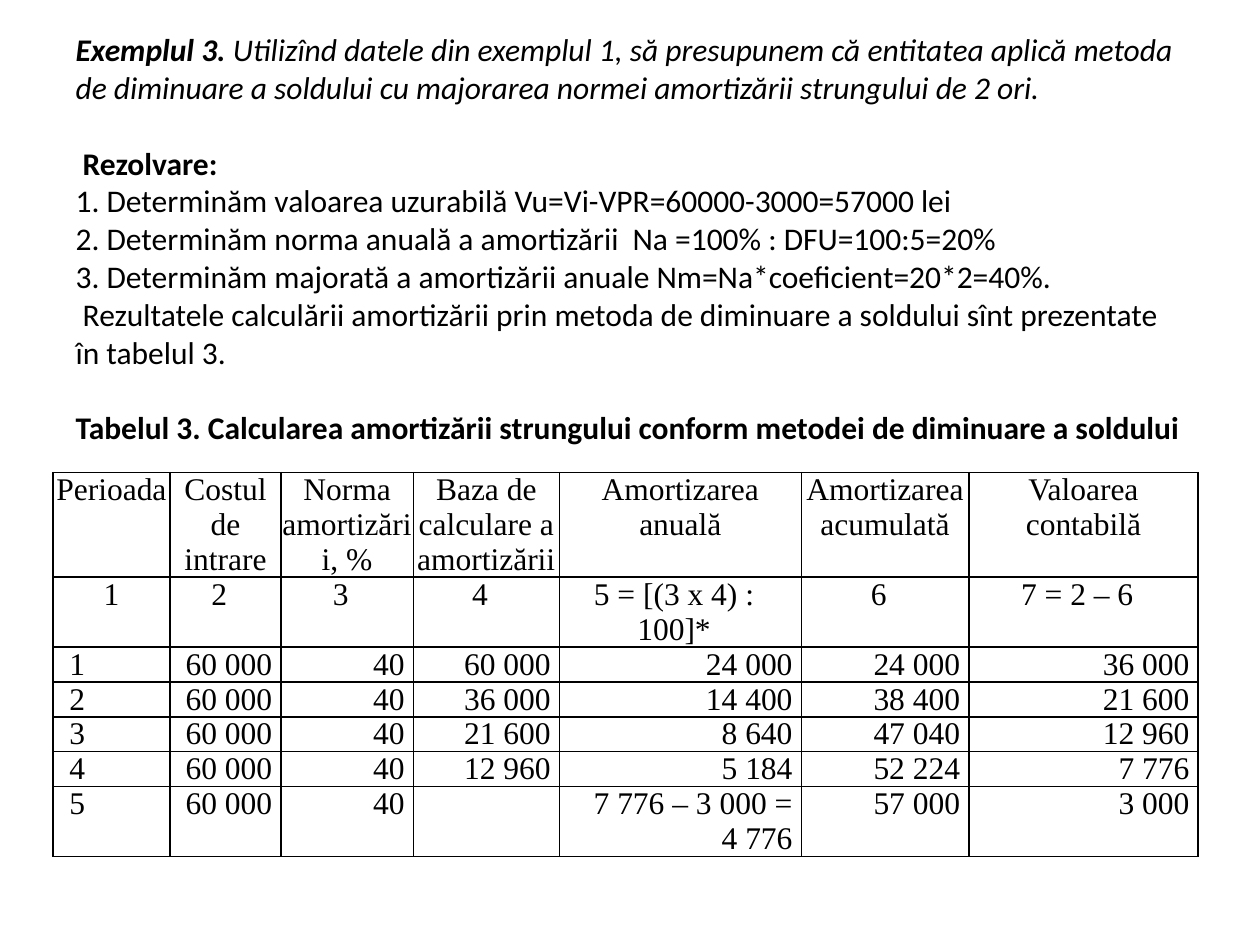
from lxml.etree import SubElement
from pptx import Presentation
from pptx.dml.color import RGBColor
from pptx.enum.text import MSO_ANCHOR as Anchor, MSO_AUTO_SIZE as Auto, PP_ALIGN as Align
from pptx.oxml.ns import qn
from pptx.util import Inches, Pt

BLACK = RGBColor(0, 0, 0)
SIZE = Pt(18)
LINE = Pt(21.6)

TITLE = [
    (0, [("Exemplul 3.", True, True),
         (" Utilizînd datele din exemplul 1, să presupunem că entitatea aplică metoda de diminuare "
          "a soldului cu majorarea normei amortizării strungului de 2 ori.", False, True)]),
    (1, [(" Rezolvare:", True, False)]),
    (0, [("1. Determinăm valoarea uzurabilă Vu=Vi-VPR=60000-3000=57000 lei", False, False)]),
    (0, [("2. Determinăm norma anuală a amortizării  Na =100% : DFU=100:5=20%", False, False)]),
    (0, [("3. Determinăm majorată a amortizării anuale Nm=Na*coeficient=20*2=40%.", False, False)]),
    (0, [(" Rezultatele calculării amortizării prin metoda de diminuare a soldului sînt prezentate "
          "în tabelul 3.", False, False)]),
    (1, [("Tabelul 3. Calcularea amortizării strungului conform metodei de diminuare a soldului",
          True, False)]),
]
ROWS = [
    ["Perioada", "Costul de intrare", "Norma amortizării, %", "Baza de calculare a amortizării",
     "Amortizarea\nanuală", "Amortizarea\nacumulată", "Valoarea\ncontabilă"],
    ["1", "2", "3", "4", "5 = [(3 x 4) : 100]*", "6", "7 = 2 – 6"],
    ["1", "60 000", "40", "60 000", "24 000", "24 000", "36 000"],
    ["2", "60 000", "40", "36 000", "14 400", "38 400", "21 600"],
    ["3", "60 000", "40", "21 600", "8 640", "47 040", "12 960"],
    ["4", "60 000", "40", "12 960", "5 184", "52 224", "7 776"],
    ["5", "60 000", "40", "", "7 776 – 3 000 =\n4 776", "57 000", "3 000"],
]
COLS = [0.93, 0.88, 1.05, 1.16, 1.92, 1.33, 1.82]
UNIT = 0.25
SPANS = [3, 2, 1, 1, 1, 1, 2]


def style(font, name, bold=False, slant=False):
    font.name, font.size, font.bold, font.italic = name, SIZE, bold, slant
    font.color.rgb = BLACK


def layout(row, col):
    if row == 0:
        return Align.CENTER, 0.01, 0.01
    if row == 1:
        return Align.CENTER, 0.01, 0.11 if col else 0.01
    if col == 0:
        return Align.LEFT, 0.13, 0.01
    return Align.RIGHT, 0.01, 0.07


def border(cell):
    props = cell._tc.get_or_add_tcPr()
    for side in ("lnL", "lnR", "lnT", "lnB"):
        line = SubElement(props, qn("a:" + side), w=str(Pt(1)))
        fill = SubElement(line, qn("a:solidFill"))
        SubElement(fill, qn("a:srgbClr"), val=str(BLACK))


def add_title(slide):
    title = slide.shapes.title
    title.left, title.top, title.width, title.height = map(Inches, (0.5, 1.42, 9, 2.17))
    frame = title.text_frame
    frame.word_wrap, frame.auto_size = True, Auto.NONE
    frame.vertical_anchor = Anchor.BOTTOM
    for i, (gap, runs) in enumerate(TITLE):
        para = frame.add_paragraph() if i else frame.paragraphs[0]
        para.alignment, para.line_spacing = Align.LEFT, LINE
        para.space_before = gap * LINE
        for text, bold, slant in runs:
            run = para.add_run()
            run.text = text
            style(run.font, "Calibri", bold, slant)


def add_grid(slide):
    table = slide.shapes.add_table(
        len(ROWS), len(COLS), Inches(0.42), Inches(3.75),
        Inches(sum(COLS)), Inches(UNIT * sum(SPANS))).table
    table.first_row = table.horz_banding = False
    for col, width in zip(table.columns, COLS):
        col.width = Inches(width)
    for r, (texts, span) in enumerate(zip(ROWS, SPANS)):
        table.rows[r].height = Inches(UNIT * span)
        for c, text in enumerate(texts):
            cell = table.cell(r, c)
            align, left, right = layout(r, c)
            cell.margin_left, cell.margin_right = Inches(left), Inches(right)
            cell.margin_top = cell.margin_bottom = 0
            border(cell)
            cell.fill.background()
            cell.text_frame.text = text
            for para in cell.text_frame.paragraphs:
                para.alignment = align
                for run in para.runs:
                    style(run.font, "Times New Roman")


def main():
    deck = Presentation()
    deck.slide_width, deck.slide_height = Inches(10), Inches(7.5)
    slide = deck.slides.add_slide(deck.slide_layouts[5])
    add_title(slide)
    add_grid(slide)
    deck.save("out.pptx")


if __name__ == "__main__":
    main()
